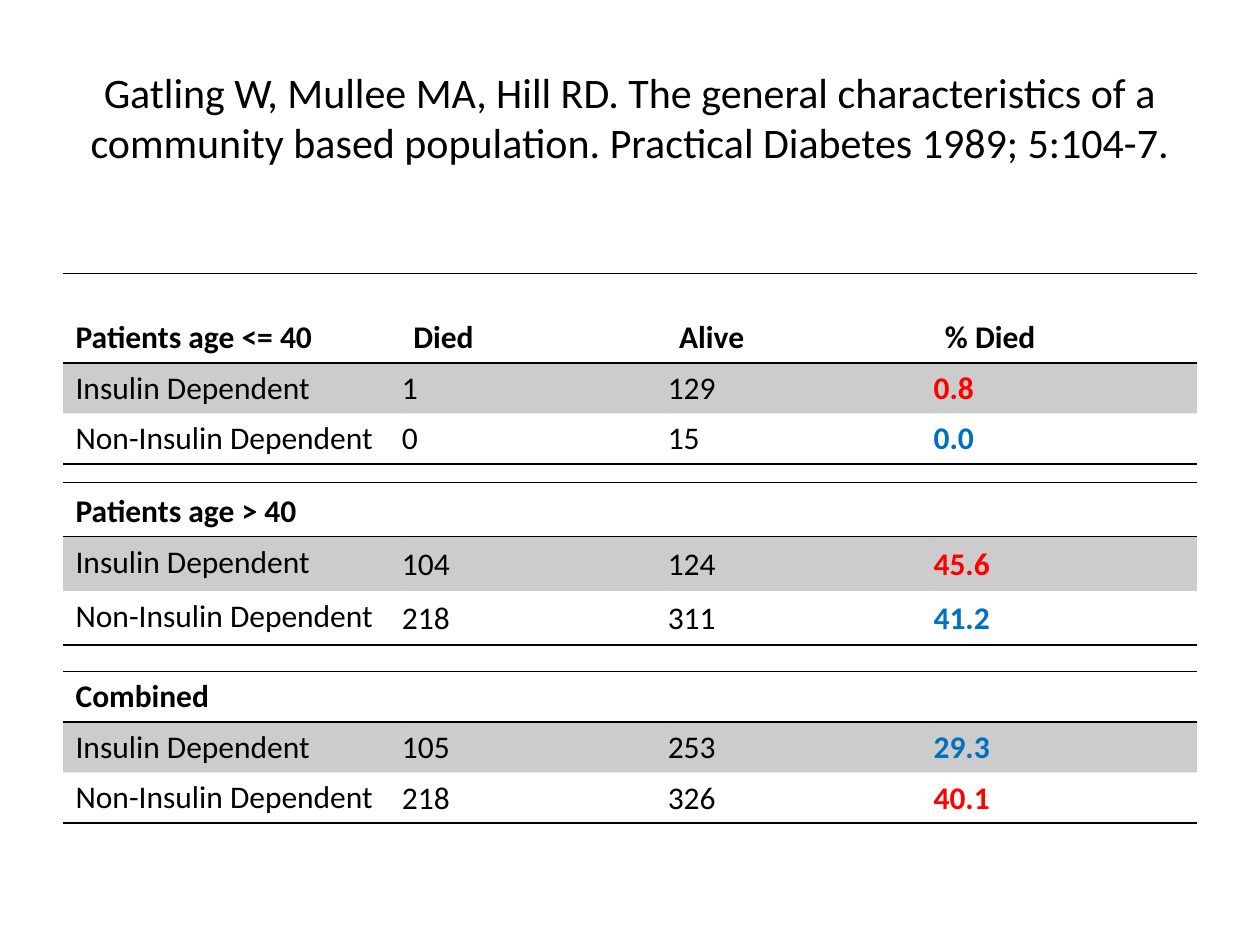
import dataclasses

import lxml.etree
import pptx
import pptx.dml.color
import pptx.enum.text
import pptx.oxml.ns
import pptx.util

Inches = pptx.util.Inches
Pt = pptx.util.Pt
Anchor = pptx.enum.text.MSO_ANCHOR
qn = pptx.oxml.ns.qn


@dataclasses.dataclass(frozen=True)
class Theme:
    font: str = "Calibri"
    ink: str = "000000"
    higher: str = "FF0000"
    lower: str = "0070C0"
    band_opacity: int = 20
    title_size: int = 24
    table_size: int = 18
    rule_width: int = 1


THEME = Theme()
NO_STYLE = "{2D5ABB26-0587-4C30-8999-92F81FD0307C}"
LEFT, WIDTH = 0.5, 9
COLUMNS = (2.68, 2.11, 2.11, 2.1)
GROUPS = ("Insulin Dependent", "Non-Insulin Dependent")

AGE_TABLES = (
    (2.17, (0.71, 0.4, 0.4), ("Patients age <= 40", "Died", "Alive", "% Died"),
     (("1", "129", "0.8"), ("0", "15", "0.0"))),
    (3.83, (0.43, 0.43, 0.43), ("Patients age > 40", "", "", ""),
     (("104", "124", "45.6"), ("218", "311", "41.2"))),
    (5.33, (0.4, 0.4, 0.4), ("Combined", "", "", ""),
     (("105", "253", "29.3"), ("218", "326", "40.1"))),
)


def add_run(paragraph, wording, size, color=THEME.ink, bold=False):
    run = paragraph.add_run()
    run.text = wording
    run.font.name = THEME.font
    run.font.size = Pt(size)
    run.font.bold = bold
    run.font.color.rgb = pptx.dml.color.RGBColor.from_string(color)


def add_citation(slide, wording):
    citation = slide.shapes.add_textbox(Inches(LEFT), Inches(0.3), Inches(WIDTH), Inches(1.25))
    frame = citation.text_frame
    frame.word_wrap = True
    frame.vertical_anchor = Anchor.MIDDLE
    frame.paragraphs[0].alignment = pptx.enum.text.PP_ALIGN.CENTER
    add_run(frame.paragraphs[0], wording, THEME.title_size)


def rule_cell(cell, *sides):
    properties = cell._tc.get_or_add_tcPr()
    for side in sides:
        rule = lxml.etree.SubElement(properties, qn(f"a:ln{side}"), w=str(Pt(THEME.rule_width)))
        fill = lxml.etree.SubElement(rule, qn("a:solidFill"))
        lxml.etree.SubElement(fill, qn("a:srgbClr"), val=THEME.ink)


def shade_cell(cell):
    cell.fill.solid()
    cell.fill.fore_color.rgb = pptx.dml.color.RGBColor.from_string(THEME.ink)
    color = cell._tc.tcPr.find(".//" + qn("a:srgbClr"))
    lxml.etree.SubElement(color, qn("a:alpha"), val=str(THEME.band_opacity * 1000))


def fill_header(table, headings):
    for cell, heading in zip(table.rows[0].cells, headings):
        rule_cell(cell, "T", "B")
        cell.fill.background()
        cell.vertical_anchor = Anchor.BOTTOM
        paragraph = cell.text_frame.paragraphs[0]
        if heading:
            add_run(paragraph, heading, THEME.table_size, bold=True)
        else:
            paragraph.font.size = Pt(THEME.table_size)


def fill_group(row, group, counts, rate_color, shaded):
    for column, (cell, wording) in enumerate(zip(row.cells, (group, *counts))):
        if shaded:
            shade_cell(cell)
        else:
            rule_cell(cell, "B")
            cell.fill.background()
        if column:
            cell.vertical_anchor = Anchor.MIDDLE
            cell.margin_left = cell.margin_right = cell.margin_top = Inches(0.01)
            cell.margin_bottom = 0
        is_rate = column == len(COLUMNS) - 1
        add_run(cell.text_frame.paragraphs[0], wording, THEME.table_size,
                rate_color if is_rate else THEME.ink, is_rate)


def add_age_table(slide, top, heights, headings, outcomes):
    frame = slide.shapes.add_table(len(heights), len(COLUMNS), Inches(LEFT), Inches(top),
                                   Inches(WIDTH), Inches(sum(heights)))
    table = frame.table
    table.first_row = table.horz_banding = False
    table._tbl.tblPr.find(qn("a:tableStyleId")).text = NO_STYLE
    for column, width in zip(table.columns, COLUMNS):
        column.width = Inches(width)
    for row, height in zip(table.rows, heights):
        row.height = Inches(height)

    fill_header(table, headings)
    highest = max(float(counts[-1]) for counts in outcomes)
    for index, (group, counts) in enumerate(zip(GROUPS, outcomes)):
        rate_color = THEME.higher if float(counts[-1]) == highest else THEME.lower
        fill_group(table.rows[index + 1], group, counts, rate_color, shaded=index == 0)


def main():
    deck = pptx.Presentation()
    deck.slide_width, deck.slide_height = Inches(10), Inches(7.5)
    slide = deck.slides.add_slide(deck.slide_layouts[6])
    add_citation(slide, "Gatling W, Mullee MA, Hill RD. The general characteristics of a "
                        "community based population. Practical Diabetes 1989; 5:104-7.")
    for age_table in AGE_TABLES:
        add_age_table(slide, *age_table)
    deck.save("out.pptx")


if __name__ == "__main__":
    main()
